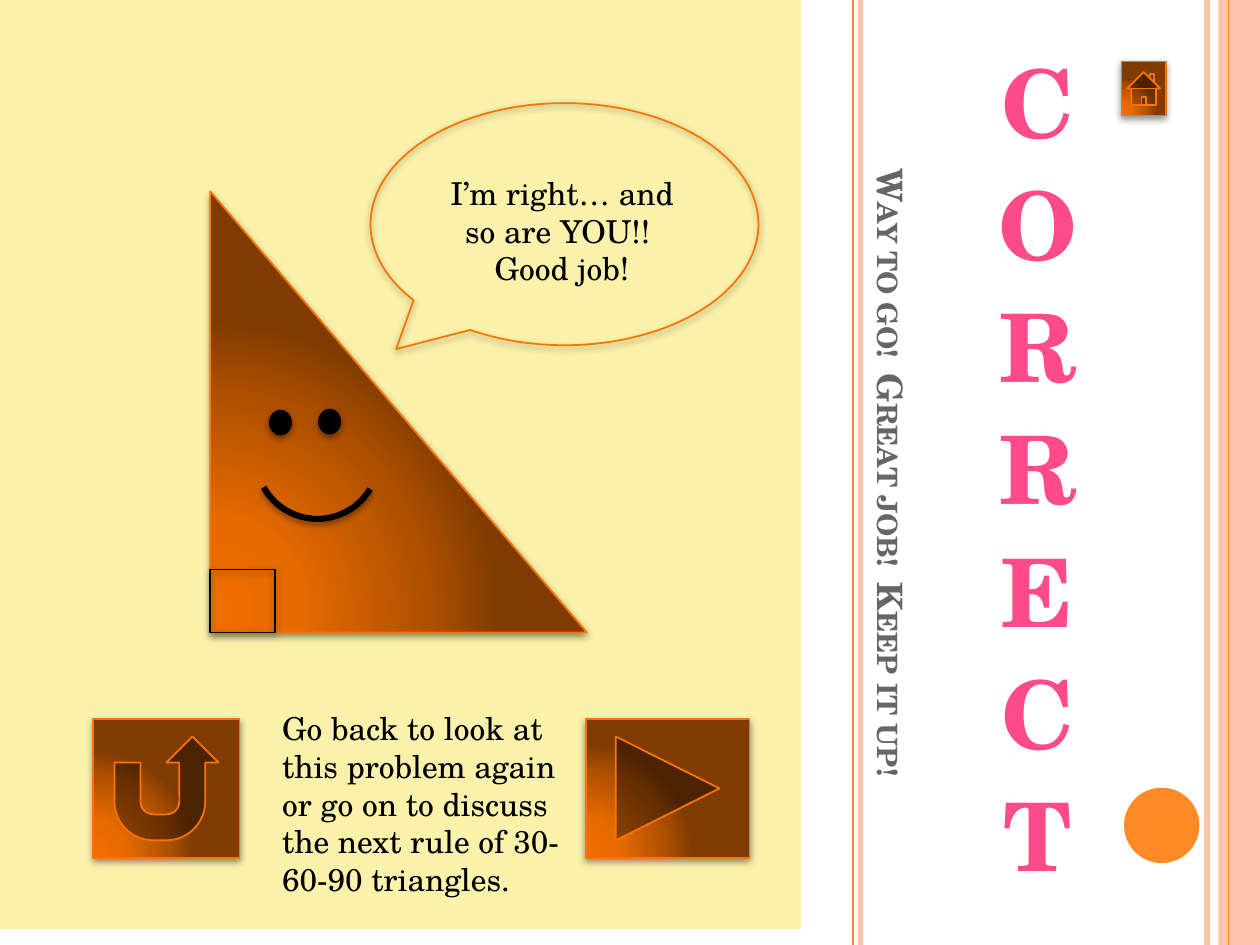
from math import cos, sin, radians
from lxml.etree import SubElement as Sub
from pptx import Presentation
from pptx.dml.color import RGBColor
from pptx.enum.shapes import MSO_CONNECTOR as Link, MSO_SHAPE as Kind
from pptx.enum.text import MSO_ANCHOR as Anchor, MSO_AUTO_SIZE as Fit, PP_ALIGN as Align
from pptx.oxml.ns import qn
from pptx.util import Cm, Pt

FONT = "TeX Gyre Schola"
EDGE = "FB7400"
PEACH = "FFC4AD"
GOLD = "FF8A26"
CREAM = "FAF2AA"
BLACK = "000000"
GLOW = ((0, "F06E00"), (30, "E76B00"), (75, "AE5000"), (100, "803B00"))


def tint(code):
    """Turn a hex string into a colour."""
    return RGBColor.from_string(code)


def write(frame, text, size=18, color=BLACK, bold=False, align=Align.LEFT,
          before=0, after=0, caps=False, anchor=Anchor.TOP, fit=Fit.NONE):
    """Fill a text frame, one paragraph for each line of the text."""
    frame.text = text
    frame.word_wrap = True
    frame.auto_size = fit
    frame.vertical_anchor = anchor
    for para in frame.paragraphs:
        para.alignment = align
        para.space_before, para.space_after = Pt(before), Pt(after)
        props = para._p.get_or_add_pPr()
        props.set("marL", "0")
        props.set("indent", "0")
        Sub(props, qn("a:buNone"))
        for run in para.runs:
            font = run.font
            font.name, font.size, font.bold = FONT, Pt(size), bold
            font.color.rgb = tint(color)
            if caps:
                run._r.get_or_add_rPr().set("cap", "small")


def place(item, x, y, w, h):
    """Set the box of a shape in centimetres."""
    item.left, item.top, item.width, item.height = Cm(x), Cm(y), Cm(w), Cm(h)


def shade(item, alpha=42, blur=4, dist=1.6):
    """Give a shape a soft shadow that falls straight down."""
    item.shadow.inherit = False
    glow = Sub(item._element.spPr.find(qn("a:effectLst")), qn("a:outerShdw"),
               blurRad=str(Pt(blur)), dist=str(Pt(dist)), dir="5400000", rotWithShape="0")
    Sub(Sub(glow, qn("a:srgbClr"), val=BLACK), qn("a:alpha"), val=str(alpha * 1000))


def blend(item):
    """Fill a shape with the round orange gradient."""
    geom = item._element.spPr.find(qn("a:prstGeom"))
    grad = Sub(item._element.spPr, qn("a:gradFill"), rotWithShape="1")
    stops = Sub(grad, qn("a:gsLst"))
    for pos, code in GLOW:
        Sub(Sub(stops, qn("a:gs"), pos=str(pos * 1000)), qn("a:srgbClr"), val=code)
    Sub(Sub(grad, qn("a:path"), path="circle"), qn("a:fillToRect"),
        l="5000", t="100000", r="120000", b="10000")
    geom.addnext(grad)


def draw(slide, kind, x, y, w, h, fill=None, line=None, width=1, glow=False, shadow=True):
    """Add a preset shape with its fill, line and shadow."""
    item = slide.shapes.add_shape(kind, Cm(x), Cm(y), Cm(w), Cm(h))
    if glow:
        blend(item)
    elif fill:
        item.fill.solid()
        item.fill.fore_color.rgb = tint(fill)
    else:
        item.fill.background()
    if line:
        item.line.color.rgb = tint(line)
        item.line.width = Pt(width)
    else:
        item.line.fill.background()
    if shadow:
        shade(item)
    else:
        item.shadow.inherit = False
    return item


def rule(slide, x, y, h, color, width):
    """Add an upright line."""
    item = slide.shapes.add_connector(Link.STRAIGHT, Cm(x), Cm(y), Cm(x), Cm(y + h))
    item.line.color.rgb = tint(color)
    item.line.width = Pt(width)
    Sub(item._element.spPr, qn("a:effectLst"))


def label(slide, x, y, w, h, text, **form):
    """Add a text box."""
    box = slide.shapes.add_textbox(Cm(x), Cm(y), Cm(w), Cm(h))
    write(box.text_frame, text, **form)


def border(slide, x, y, w, h):
    """Draw the rules, band and dot of the right side."""
    rule(slide, x + 7.13, y, h, PEACH, 3)
    draw(slide, Kind.OVAL, x + 5.46, y + 15.88, 1.52, 1.52, fill=GOLD, shadow=False)
    draw(slide, Kind.RECTANGLE, x + w - 0.84, y, 0.84, h, fill=PEACH, shadow=False)
    rule(slide, x + 7.57, y, h, GOLD, 0.75)
    rule(slide, x + 0.15, y, h, PEACH, 3)
    rule(slide, x, y, h, GOLD, 1)


def praise(slide, x, y, w, h):
    """Set the turned title in an upright box."""
    title = slide.shapes.title
    place(title, x + (w - h) / 2, y + (h - w) / 2, h, w)
    title.rotation = 90
    write(title.text_frame, "Way to go!  Great job!  Keep it up!", size=20, color="666666",
          bold=True, caps=True, align=Align.CENTER, anchor=Anchor.BOTTOM)


def tower(slide, x, y, w, h):
    """Stack the letters of the verdict in the body."""
    body = slide.placeholders[1]
    place(body, x, y, w, h)
    write(body.text_frame, "\n".join("CORRECT"), size=54, color="FF4B89", bold=True,
          align=Align.CENTER, before=1, after=4)


def smile(slide, x, y, radius):
    """Draw an open arc around a centre."""
    spots = [(Cm(x + radius * cos(radians(a))), Cm(y + radius * sin(radians(a))))
             for a in range(151, 30, -3)]
    pen = slide.shapes.build_freeform(*spots[0])
    pen.add_line_segments(spots[1:], close=False)
    mouth = pen.convert_to_shape()
    mouth.fill.background()
    mouth.line.color.rgb = tint(BLACK)
    mouth.line.width = Pt(3.5)
    shade(mouth, 35, 3, 2)


def hero(slide, x, y, w, h):
    """Draw the talking right triangle in its box."""
    label(slide, x + 4.22, y - 0.48, 5.74, 2.57, "I’m right… and so are YOU!!  Good job!",
          align=Align.CENTER, fit=Fit.SHAPE_TO_FIT_TEXT)
    draw(slide, Kind.RIGHT_TRIANGLE, x, y, w, h, line=EDGE, glow=True)
    cloud = draw(slide, Kind.OVAL_CALLOUT, x + 3.23, y - 1.78, 7.82, 4.88, line=EDGE)
    cloud.adjustments[0], cloud.adjustments[1] = -0.434, 0.516
    draw(slide, Kind.RECTANGLE, x, y + h - 1.27, 1.3, 1.27, line=BLACK)
    smile(slide, x + 2.16, y + 5.36, 1.24)
    for dx, dy in ((1.2, 4.42), (2.19, 4.4)):
        draw(slide, Kind.OVAL, x + dx, y + dy, 0.43, 0.48, fill=BLACK, line=BLACK)


def choice(slide, x, y, w, h):
    """Place the note between its back and next buttons."""
    draw(slide, Kind.ACTION_BUTTON_RETURN, x, y, 2.95, h, line=EDGE, glow=True)
    label(slide, x + 3.56, y - 0.33, 6.38, 4.11,
          "Go back to look at this problem again or go on to discuss "
          "the next rule of 30-60-90 triangles.", fit=Fit.SHAPE_TO_FIT_TEXT)
    draw(slide, Kind.ACTION_BUTTON_FORWARD_OR_NEXT, x + w - 3.3, y, 3.3, h,
         line=EDGE, glow=True)


def main():
    """Build and save the slide."""
    deck = Presentation()
    deck.slide_width, deck.slide_height = Cm(25.4), Cm(19.05)
    slide = deck.slides.add_slide(deck.slide_layouts[1])
    border(slide, 17.2, 0, 8.2, 19.05)
    praise(slide, 17.43, 0.76, 1.27, 17.53)
    tower(slide, 18.8, 0.76, 4.24, 13.74)
    draw(slide, Kind.RECTANGLE, 0, 0, 16.13, 18.72, fill=CREAM, line=CREAM,
         width=0.75, shadow=False)
    hero(slide, 4.24, 3.86, 7.59, 8.89)
    draw(slide, Kind.ACTION_BUTTON_HOME, 22.61, 1.24, 0.89, 1.09, line=EDGE, glow=True)
    choice(slide, 1.88, 14.5, 13.23, 2.79)
    deck.save("out.pptx")


if __name__ == "__main__":
    main()
